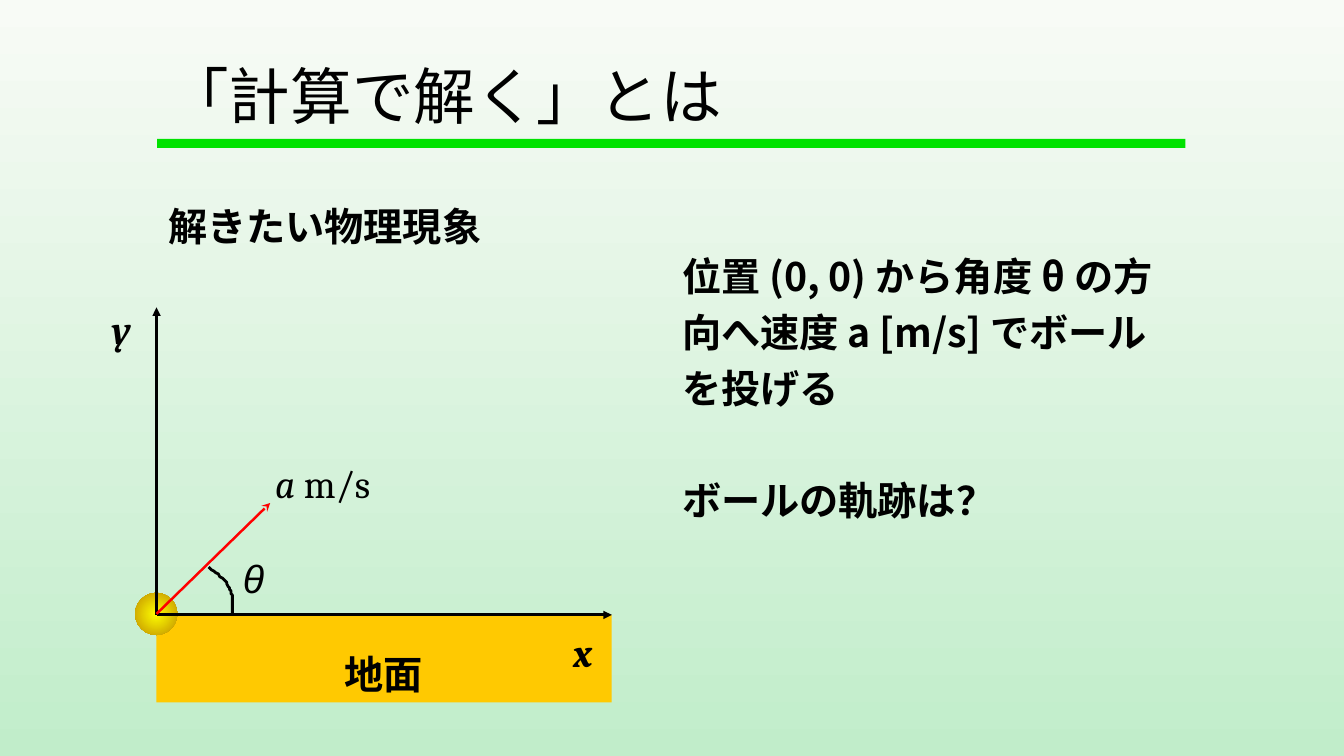
from dataclasses import dataclass

from lxml.etree import SubElement
from pptx import Presentation
from pptx.dml.color import RGBColor
from pptx.enum.shapes import MSO_CONNECTOR as Link, MSO_SHAPE as Preset
from pptx.enum.text import MSO_ANCHOR as Anchor, MSO_AUTO_SIZE as AutoSize, PP_ALIGN as Align
from pptx.oxml.ns import qn
from pptx.util import Length, Pt

JAPANESE = "Noto Sans CJK JP"
BLACK = "000000"
ORIGIN_X, ORIGIN_Y = 111.8, 439.2
AXIS_END = 437


@dataclass
class Label:
    left: float
    top: float
    width: float
    height: float
    paragraphs: list[str]
    font: str = JAPANESE
    bold: bool = True
    italic: bool = False
    wrap: bool = False
    spacing: float | Length = Pt(40)
    upright_end: str = ""


@dataclass
class Arrow:
    start: tuple[float, float]
    end: tuple[float, float]
    colour: str = BLACK
    width: float = 2
    head: str = "triangle"


LABELS = [
    Label(480.2, 170.5, 371.5, 208.8,
          ["位置 (0, 0) から角度 θ の方向へ速度 a [m/s] でボールを投げる", "ボールの軌跡は？"], wrap=True),
    Label(113, 134.5, 257.8, 46, ["解きたい物理現象"], wrap=True),
    Label(402.5, 438.5, 31, 44, ["x"], "Cambria", italic=True, spacing=1.2),
    Label(72.7, 208, 29.5, 44, ["y"], "Cambria", italic=True, spacing=1.2),
    Label(189.4, 318.2, 85.7, 44, ["a"], "Cambria", False, True, spacing=1.2, upright_end=" m/s"),
    Label(166.3, 386, 30.2, 44, ["θ"], "Arial", False, True, spacing=1.2),
    Label(239, 454.9, 71.3, 46, ["地面"]),
]

ARROWS = [
    Arrow((ORIGIN_X, ORIGIN_Y), (AXIS_END, ORIGIN_Y)),
    Arrow((ORIGIN_X, ORIGIN_Y), (ORIGIN_X, 219.6)),
    Arrow((ORIGIN_X, 438.5), (193, 359.3), "FF0000", 1.75, "stealth"),
]


def colour(value: str) -> RGBColor:
    return RGBColor.from_string(value)


def set_gradient(fill, first: str, last: str) -> None:
    fill.gradient()
    for stop, value, position in zip(fill.gradient_stops, (first, last), (0, 1)):
        stop.color.rgb = colour(value)
        stop.position = position


def style_paragraph(para, font: str, size: float, bold: bool) -> None:
    para.alignment = Align.LEFT
    para.font.name = font
    para.font.size = Pt(size)
    para.font.bold = bold
    para.font.color.rgb = colour(BLACK)
    latin = para._p.pPr.find(qn("a:defRPr")).find(qn("a:latin"))
    east_asian = latin.makeelement(qn("a:ea"), {"typeface": font})
    latin.addnext(east_asian)


def add_shape(page, preset, left: float, top: float, width: float, height: float, fill: str):
    shape = page.shapes.add_shape(preset, Pt(left), Pt(top), Pt(width), Pt(height))
    shape.shadow.inherit = False
    shape.line.fill.background()
    shape.fill.solid()
    shape.fill.fore_color.rgb = colour(fill)
    return shape


def add_title(page) -> None:
    title = page.shapes.title
    title.left, title.top, title.width, title.height = Pt(112.3), Pt(36.7), Pt(734.4), Pt(68.4)
    frame = title.text_frame
    frame.text = "「計算で解く」とは"
    frame.auto_size = AutoSize.NONE
    frame.vertical_anchor = Anchor.MIDDLE
    para = frame.paragraphs[0]
    para.line_spacing = 0.9
    style_paragraph(para, JAPANESE, 44, False)


def add_ball(page) -> None:
    ball = add_shape(page, Preset.OVAL, 96.5, 423.4, 30.2, 30.2, "FFFF00")
    set_gradient(ball.fill, "FFFF00", "C08E00")
    gradient = ball._element.spPr.find(qn("a:gradFill"))
    gradient.remove(gradient.find(qn("a:lin")))
    radial = SubElement(gradient, qn("a:path"), {"path": "circle"})
    SubElement(radial, qn("a:fillToRect"), {side: "50000" for side in "ltrb"})


def add_label(page, label: Label) -> None:
    box = page.shapes.add_textbox(Pt(label.left), Pt(label.top), Pt(label.width), Pt(label.height))
    frame = box.text_frame
    frame.word_wrap = label.wrap
    for index, text in enumerate(label.paragraphs):
        para = frame.add_paragraph() if index else frame.paragraphs[0]
        para.line_spacing = label.spacing
        if index:
            para.space_before = Pt(40)
        style_paragraph(para, label.font, 28, label.bold)
        span = para.add_run()
        span.text = text
        if label.upright_end:
            span.font.italic = label.italic
            ending = para.add_run()
            ending.text = label.upright_end
            ending.font.italic = False
        else:
            para.font.italic = label.italic


def add_arrow(page, arrow: Arrow) -> None:
    ends = [Pt(value) for value in (*arrow.start, *arrow.end)]
    line = page.shapes.add_connector(Link.STRAIGHT, *ends)
    line.line.color.rgb = colour(arrow.colour)
    line.line.width = Pt(arrow.width)
    SubElement(line.line._get_or_add_ln(), qn("a:tailEnd"), {"type": arrow.head})
    SubElement(line._element.spPr, qn("a:effectLst"))


def curve_point(controls: list[tuple[float, float]], t: float) -> tuple[float, float]:
    weights = ((1 - t) ** 3, 3 * t * (1 - t) ** 2, 3 * t ** 2 * (1 - t), t ** 3)
    x, y = (sum(w * c[axis] for w, c in zip(weights, controls)) for axis in (0, 1))
    return x, y


def add_angle_arc(page) -> None:
    controls = [(149, 405.4), (164.9, 416.2), (167, 421.9), (166.3, 438.5)]
    steps = 24
    points = [curve_point(controls, step / steps) for step in range(steps + 1)]
    builder = page.shapes.build_freeform(*points[0], scale=Pt(1))
    builder.add_line_segments(points[1:], close=False)
    arc = builder.convert_to_shape()
    arc.shadow.inherit = False
    arc.fill.background()
    arc.line.color.rgb = colour(BLACK)
    arc.line.width = Pt(2)


def main() -> None:
    deck = Presentation()
    deck.slide_width, deck.slide_height = Pt(960), Pt(540)
    page = deck.slides.add_slide(deck.slide_layouts[5])
    set_gradient(page.background.fill, "F8FBF6", "C1EDCA")
    page.background.fill.gradient_angle = 270
    add_title(page)
    add_shape(page, Preset.RECTANGLE, 112.3, 99.2, 734.4, 6.5, "00E200")
    add_shape(page, Preset.RECTANGLE, ORIGIN_X, ORIGIN_Y, AXIS_END - ORIGIN_X, 62.6, "FFC901")
    add_ball(page)
    for arrow in ARROWS:
        add_arrow(page, arrow)
    add_angle_arc(page)
    for label in LABELS:
        add_label(page, label)
    deck.save("out.pptx")


if __name__ == "__main__":
    main()
